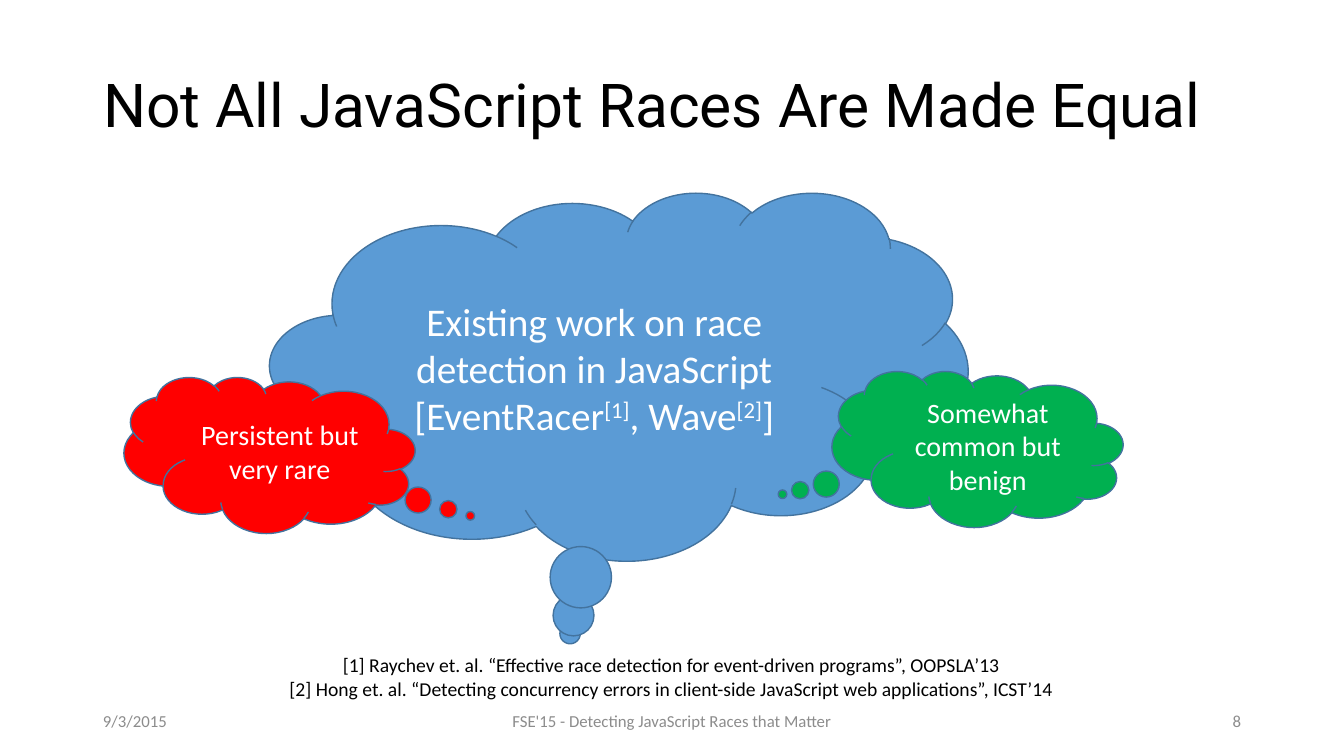
from pptx import Presentation
from pptx import util as u
from pptx.dml.color import RGBColor
from pptx.enum import shapes, text

SIZE = (1344, 756)
TITLE = ("Not All JavaScript Races Are Made Equal", (93, 30, 1159, 146))
CLOUDS = [
    ((270, 192, 698, 368), "5B9BD5", 28, False, (-0.07, 0.7),
     [("Existing work on race detection in JavaScript [EventRacer", 0),
      ("[1]", 30), (", Wave", 0), ("[2]", 30), ("]", 0)]),
    ((124, 377, 291, 156), "FF0000", 20, True, (-0.69, 0.39),
     [("Persistent but very rare", 0)]),
    ((832, 371, 291, 156), "00B050", 20, True, (0.67, 0.29),
     [("Somewhat common but benign", 0)]),
]
MID, LEFT, RIGHT = text.PP_ALIGN.CENTER, text.PP_ALIGN.LEFT, text.PP_ALIGN.RIGHT
NOTES = [
    ((500, 701, 344, 40), MID, 12, "8C8C8C",
     ["FSE'15 - Detecting JavaScript Races that Matter"]),
    ((93, 701, 138, 40), LEFT, 12, "8C8C8C", ["9/3/2015"]),
    ((890, 701, 361, 40), RIGHT, 12, "8C8C8C", ["8"]),
    ((157, 648, 1029, 57), MID, 14, "000000",
     ["[1] Raychev et. al. “Effective race detection for event-driven programs”, OOPSLA’13",
      "[2] Hong et. al. “Detecting concurrency errors in client-side JavaScript web applications”, ICST’14"]),
]


def px(n):
    return u.Emu(round(n * 914400 / 100.8))


def rgb(code):
    return RGBColor.from_string(code)


def write(frame, paras, align, size, color, face="Calibri"):
    frame.word_wrap = True
    frame.vertical_anchor = text.MSO_ANCHOR.MIDDLE
    for i, runs in enumerate(paras):
        para = frame.add_paragraph() if i else frame.paragraphs[0]
        para.alignment = align
        for words, lift in runs:
            run = para.add_run()
            run.text = words
            run.font.name = face
            run.font.size = u.Pt(size)
            run.font.color.rgb = rgb(color)
            if lift:
                run.font._element.set("baseline", str(lift * 1000))


def main():
    deck = Presentation()
    deck.slide_width, deck.slide_height = map(px, SIZE)
    slide = deck.slides.add_slide(deck.slide_layouts[5])

    words, box = TITLE
    title = slide.shapes.title
    title.left, title.top, title.width, title.height = map(px, box)
    write(title.text_frame, [[(words, 0)]], LEFT, 43.2, "000000", "Roboto")

    for box, fill, size, flip, tail, runs in CLOUDS:
        cloud = slide.shapes.add_shape(shapes.MSO_SHAPE.CLOUD_CALLOUT, *map(px, box))
        cloud.shadow.inherit = False
        cloud.fill.solid()
        cloud.fill.fore_color.rgb = rgb(fill)
        cloud.line.color.rgb = rgb("43739E")
        cloud.line.width = u.Pt(1)
        for i, shift in enumerate(tail):
            cloud.adjustments[i] = shift
        if flip:
            cloud._element.spPr.xfrm.set("flipH", "1")
        write(cloud.text_frame, [runs], MID, size, "FFFFFF")

    for box, align, size, color, lines in NOTES:
        note = slide.shapes.add_textbox(*map(px, box))
        write(note.text_frame, [[(line, 0)] for line in lines], align, size, color)

    deck.save("out.pptx")


if __name__ == "__main__":
    main()
